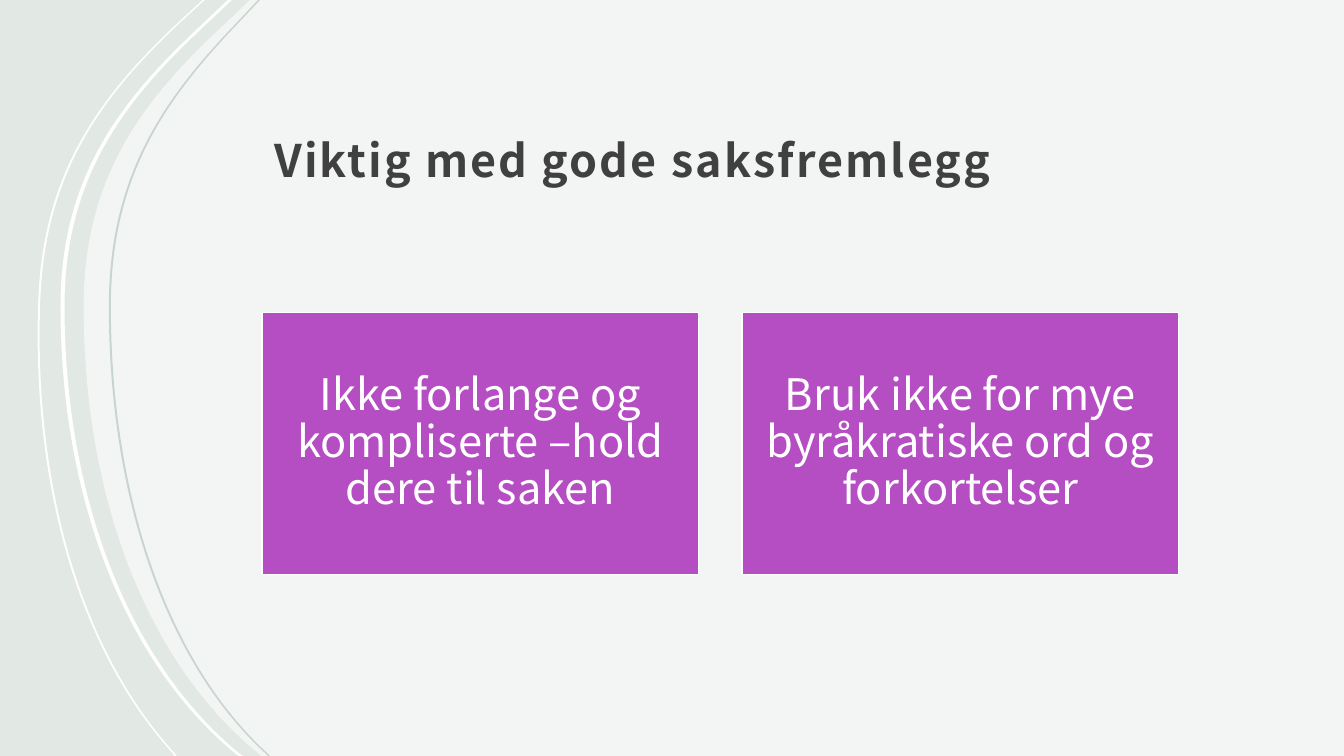
from dataclasses import dataclass

from lxml.etree import SubElement
from pptx import Presentation
from pptx.dml.color import RGBColor
from pptx.enum.shapes import MSO_SHAPE
from pptx.enum.text import MSO_ANCHOR, MSO_AUTO_SIZE, PP_ALIGN
from pptx.oxml.ns import qn
from pptx.util import Inches, Pt

FONT = "Noto Sans CJK JP"
WIDTH, HEIGHT = 13.33, 7.5
EDGE_SIZE = 9
CURVE_STARTS = (2, 5)

Point = tuple[float, float]


@dataclass
class Strip:
    edge: list[Point]
    width: float
    color: str


@dataclass
class Card:
    left: float
    text: str


def tall_edge(top: float, knee: float, bend: float, waist: float,
              hip: float, foot: float, bottom: float) -> list[Point]:
    return [(top, 0), (knee, 0.35), (bend, 1.04), (waist, 1.79), (waist, 3.04),
            (waist, 4.92), (hip, 6.57), (foot, 7.48), (bottom, HEIGHT)]


def rgb(color: str) -> RGBColor:
    return RGBColor.from_string(color)


def paint(fill, color: str) -> None:
    fill.solid()
    fill.fore_color.rgb = rgb(color)


def is_control(index: int) -> bool:
    return any(index % EDGE_SIZE in (start, start + 1) for start in CURVE_STARTS)


def add_outline(slide, points: list[Point], color: str):
    emu = [(Inches(x), Inches(y)) for x, y in points]
    anchors = [i for i in range(len(emu)) if not is_control(i)]
    builder = slide.shapes.build_freeform(*emu[0], scale=1.0)
    builder.add_line_segments([emu[i] for i in anchors[1:]], close=True)
    sp = builder.convert_to_shape()
    lines = list(sp.element.iter(qn("a:lnTo")))
    for i, line in zip(anchors[1:], lines):
        if is_control(i - 1):
            line.tag = qn("a:cubicBezTo")
            for offset, (x, y) in enumerate(emu[i - 2:i]):
                pt = SubElement(line, qn("a:pt"))
                pt.set("x", str(x - sp.left))
                pt.set("y", str(y - sp.top))
                line.insert(offset, pt)
    sp.shadow.inherit = False
    paint(sp.fill, color)
    sp.line.fill.background()
    return sp


def add_strip(slide, strip: Strip) -> None:
    right = [(x + strip.width, y) for x, y in reversed(strip.edge)]
    add_outline(slide, strip.edge + right, strip.color)


def add_panel(slide, edge: list[Point]) -> None:
    sp = add_outline(slide, [*edge, (WIDTH, HEIGHT), (WIDTH, 0)], "FFFFFF")
    color = next(sp.element.spPr.iter(qn("a:srgbClr")))
    SubElement(color, qn("a:alpha")).set("val", "60000")


def set_margins(tf, margin: float) -> None:
    tf.margin_left = tf.margin_top = tf.margin_right = tf.margin_bottom = Inches(margin)


def format_text(tf, size: float, color: str, spacing: float, align: PP_ALIGN):
    p = tf.paragraphs[0]
    p.alignment = align
    p.line_spacing = spacing
    r = p.runs[0]
    r.font.name = FONT
    r.font.size = Pt(size)
    r.font.color.rgb = rgb(color)
    return r


def add_title(slide, text: str) -> None:
    title = slide.shapes.title
    title.left, title.top = Inches(2.6), Inches(0.48)
    title.width, title.height = Inches(9.18), Inches(1.47)
    tf = title.text_frame
    tf.text = text
    tf.word_wrap = True
    tf.auto_size = MSO_AUTO_SIZE.NONE
    tf.vertical_anchor = MSO_ANCHOR.BOTTOM
    set_margins(tf, 0.12)
    tf.margin_bottom = Inches(0.1)
    r = format_text(tf, 32, "404040", 1.3, PP_ALIGN.LEFT)
    r.font.bold = True
    r.font._element.set("spc", "150")
    title.element.getparent().append(title.element)


def add_card(slide, card: Card) -> None:
    sp = slide.shapes.add_shape(MSO_SHAPE.RECTANGLE, Inches(card.left), Inches(3.1),
                                Inches(4.33), Inches(2.6))
    sp.shadow.inherit = False
    paint(sp.fill, "B54DC3")
    sp.line.color.rgb = rgb("FFFFFF")
    sp.line.width = Pt(1)
    tf = sp.text_frame
    tf.text = card.text
    tf.word_wrap = True
    tf.vertical_anchor = MSO_ANCHOR.MIDDLE
    set_margins(tf, 0.13)
    format_text(tf, 31, "FFFFFF", 0.9, PP_ALIGN.CENTER)


PANEL_EDGE = tall_edge(2.48, 2.11, 1.39, 0.83, 1.45, 2.57, 2.59)
STRIPS = [
    Strip([(2.01, 0), (1.75, 0.24), (1.02, 0.93), (0.43, 1.68), (0.38, 2.97),
           (0.31, 4.8), (0.78, 6.45), (1.71, 7.47), (1.73, HEIGHT)], 0.02, "FFFFFF"),
    Strip(tall_edge(2.26, 1.89, 1.17, 0.6, 1.23, 2.34, 2.37), 0.04, "FFFFFF"),
    Strip(tall_edge(2.56, 2.23, 1.59, 1.08, 1.64, 2.64, 2.66), 0.02, "C8D4CC"),
]
CARDS = [
    Card(2.6, "Ikke forlange og kompliserte –hold dere til saken"),
    Card(7.36, "Bruk ikke for mye byråkratiske ord og forkortelser"),
]


def main() -> None:
    prs = Presentation()
    prs.slide_width, prs.slide_height = Inches(WIDTH), Inches(HEIGHT)
    slide = prs.slides.add_slide(prs.slide_layouts[5])
    paint(slide.background.fill, "E2E8E4")
    add_panel(slide, PANEL_EDGE)
    for strip in STRIPS:
        add_strip(slide, strip)
    add_title(slide, "Viktig med gode saksfremlegg")
    for card in CARDS:
        add_card(slide, card)
    prs.save("out.pptx")


if __name__ == "__main__":
    main()
